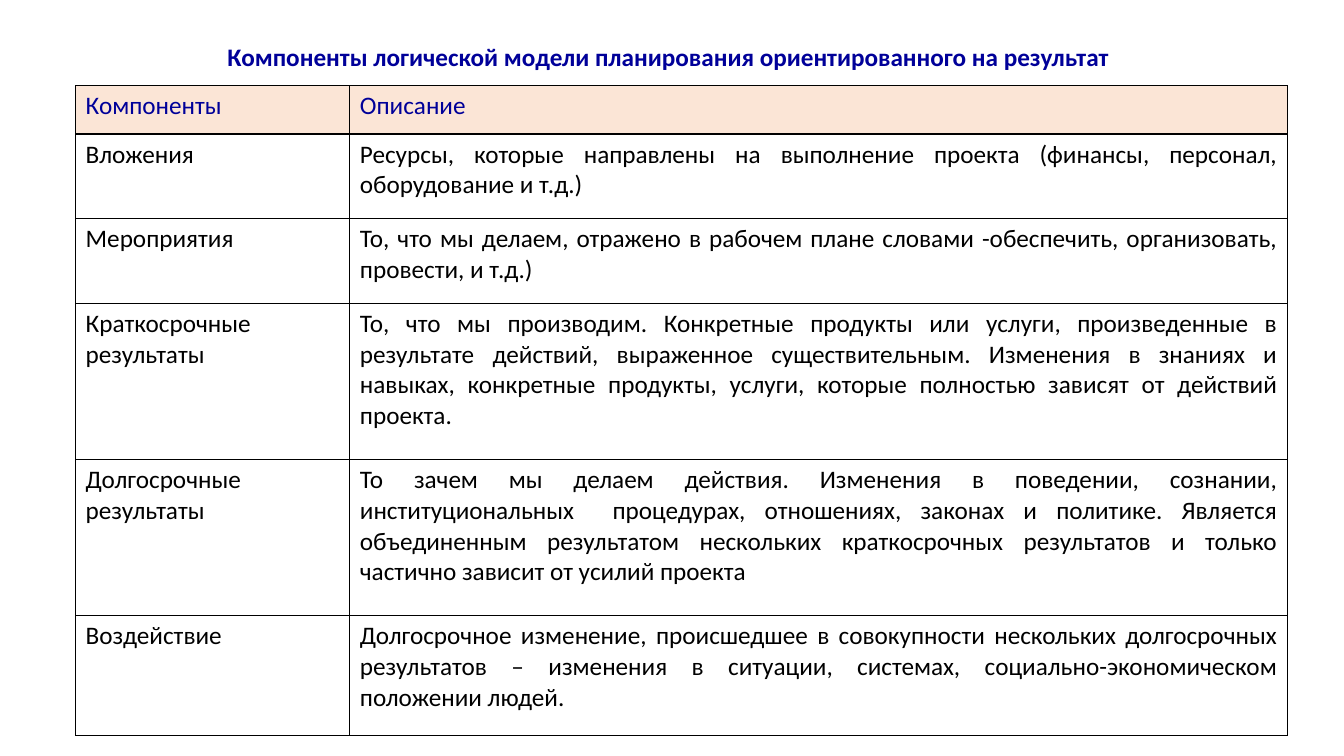
from dataclasses import dataclass

from lxml import etree
from pptx import Presentation
from pptx.dml.color import RGBColor
from pptx.enum.text import PP_ALIGN
from pptx.oxml.ns import qn
from pptx.util import Inches, Pt

LEFT, CENTER, JUSTIFY = PP_ALIGN.LEFT, PP_ALIGN.CENTER, PP_ALIGN.JUSTIFY


@dataclass(frozen=True)
class Theme:
    font: str = "Calibri"
    size: int = 18
    border_pt: int = 1
    accent: str = "000099"
    ink: str = "000000"
    header_fill: str = "FBE5D6"
    body_fill: str = "FFFFFF"


@dataclass(frozen=True)
class Row:
    component: str
    description: str
    height: float


THEME = Theme()
TITLE = "Компоненты логической модели планирования ориентированного на результат"
COLUMN_WIDTHS = (2.72, 9.3)
ROWS = (
    Row("Компоненты", "Описание", 0.48),
    Row("Вложения",
        "Ресурсы, которые направлены на выполнение проекта (финансы, персонал, "
        "оборудование и т.д.)", 0.84),
    Row("Мероприятия",
        "То, что мы делаем, отражено в рабочем плане словами -обеспечить, "
        "организовать, провести, и т.д.)", 0.84),
    Row("Краткосрочные результаты",
        "То, что мы производим. Конкретные продукты или услуги, произведенные в "
        "результате действий, выраженное существительным. Изменения в знаниях и "
        "навыках, конкретные продукты, услуги, которые полностью зависят от "
        "действий проекта.", 1.55),
    Row("Долгосрочные результаты",
        "То зачем мы делаем действия. Изменения в поведении, сознании, "
        "институциональных  процедурах, отношениях, законах и политике. Является "
        "объединенным результатом нескольких краткосрочных результатов и только "
        "частично зависит от усилий проекта", 1.55),
    Row("Воздействие",
        "Долгосрочное изменение, происшедшее в совокупности нескольких "
        "долгосрочных результатов – изменения в ситуации, системах, "
        "социально-экономическом положении людей.", 1.19),
)


def write(tf, text: str, color: str, align, bold: bool = False) -> None:
    tf.word_wrap = True
    p = tf.paragraphs[0]
    p.alignment = align
    r = p.add_run()
    r.text = text
    r.font.name = THEME.font
    r.font.size = Pt(THEME.size)
    r.font.bold = bold
    r.font.color.rgb = RGBColor.from_string(color)


def set_borders(cell) -> None:
    """Outline all four sides; lines must precede the fill in tcPr."""
    tc_pr = cell._tc.get_or_add_tcPr()
    for i, side in enumerate(("a:lnL", "a:lnR", "a:lnT", "a:lnB")):
        line = etree.Element(qn(side), w=str(Pt(THEME.border_pt)))
        fill = etree.SubElement(line, qn("a:solidFill"))
        etree.SubElement(fill, qn("a:srgbClr"), val=THEME.ink)
        tc_pr.insert(i, line)


def add_title(s) -> None:
    box = s.shapes.add_textbox(Inches(2.1), Inches(0.36), Inches(9.06), Inches(0.4))
    write(box.text_frame, TITLE, THEME.accent, CENTER, bold=True)


def add_components_table(s) -> None:
    table = s.shapes.add_table(
        len(ROWS), len(COLUMN_WIDTHS), Inches(0.75), Inches(0.85),
        Inches(sum(COLUMN_WIDTHS)), Inches(sum(row.height for row in ROWS)),
    ).table
    for column, width in zip(table.columns, COLUMN_WIDTHS):
        column.width = Inches(width)
    for i, row in enumerate(ROWS):
        table.rows[i].height = Inches(row.height)
        header = i == 0
        for j, text in enumerate((row.component, row.description)):
            cell = table.cell(i, j)
            cell.fill.solid()
            cell.fill.fore_color.rgb = RGBColor.from_string(
                THEME.header_fill if header else THEME.body_fill)
            set_borders(cell)
            write(cell.text_frame, text, THEME.accent if header else THEME.ink,
                  LEFT if header or j == 0 else JUSTIFY)


def main() -> None:
    prs = Presentation()
    prs.slide_width, prs.slide_height = Inches(13.33), Inches(7.5)
    s = prs.slides.add_slide(prs.slide_layouts[6])
    add_components_table(s)
    add_title(s)
    prs.save("out.pptx")


if __name__ == "__main__":
    main()
